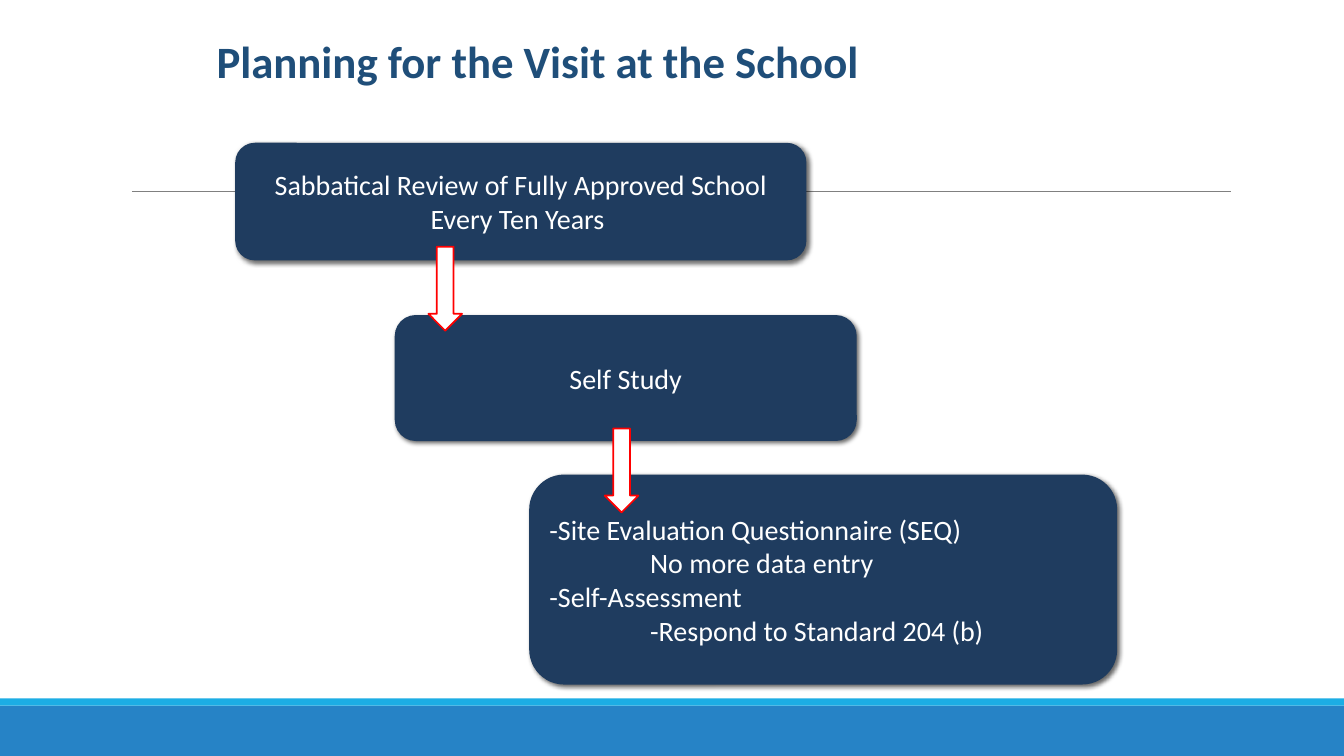
from lxml.etree import SubElement
from pptx import Presentation
from pptx.dml.color import RGBColor
from pptx.enum.shapes import MSO_CONNECTOR, MSO_SHAPE
from pptx.enum.text import MSO_ANCHOR, PP_ALIGN
from pptx.oxml.ns import qn
from pptx.util import Pt

WHITE = RGBColor(0xFF, 0xFF, 0xFF)
NAVY = RGBColor(0x1F, 0x3C, 0x5F)
TITLE = RGBColor(0x1F, 0x4E, 0x79)
BLUE = RGBColor(0x26, 0x83, 0xC6)
CYAN = RGBColor(0x1C, 0xAD, 0xE4)
GRAY = RGBColor(0x80, 0x80, 0x80)
RED = RGBColor(0xFF, 0x00, 0x00)


def write(frame, *lines, size=20, color=WHITE, bold=False,
          align=PP_ALIGN.LEFT, anchor=MSO_ANCHOR.MIDDLE):
    """Fill a frame with (text, indent in points) lines."""
    frame.word_wrap = True
    frame.vertical_anchor = anchor
    for i, (text, indent) in enumerate(lines):
        para = frame.add_paragraph() if i else frame.paragraphs[0]
        para.alignment = align
        if indent:
            para._p.get_or_add_pPr().set("marL", str(Pt(indent)))
        run = para.add_run()
        run.text = text
        font = run.font
        font.name, font.size, font.bold = "Calibri", Pt(size), bold
        font.color.rgb = color


def shade(shape):
    """Add a soft shadow falling to the lower right."""
    effects = shape._element.spPr.find(qn("a:effectLst"))
    outer = SubElement(effects, qn("a:outerShdw"), blurRad=str(Pt(3.5)),
                       dist=str(Pt(2)), dir=str(45 * 60000),
                       algn="tl", rotWithShape="0")
    black = SubElement(outer, qn("a:srgbClr"), val="000000")
    SubElement(black, qn("a:alpha"), val="60000")


class Board:
    def __init__(self, slide, edge=1.25):
        self.shapes = slide.shapes
        self.edge = edge

    def shape(self, kind, x, y, w, h, fill, line=None):
        item = self.shapes.add_shape(kind, Pt(x), Pt(y), Pt(w), Pt(h))
        item.shadow.inherit = False
        item.fill.solid()
        item.fill.fore_color.rgb = fill
        if line is None:
            item.line.fill.background()
        else:
            item.line.color.rgb = line
            item.line.width = Pt(self.edge)
        return item

    def band(self, y, h, fill):
        self.shape(MSO_SHAPE.RECTANGLE, 0, y, 960, h, fill)

    def rule(self, x, y, end):
        line = self.shapes.add_connector(
            MSO_CONNECTOR.STRAIGHT, Pt(x), Pt(y), Pt(end), Pt(y))
        line.line.color.rgb = GRAY
        line.line.width = Pt(0.5)
        SubElement(line._element.spPr, qn("a:effectLst"))

    def title(self, text, x, y, w, h):
        box = self.shapes.add_textbox(Pt(x), Pt(y), Pt(w), Pt(h))
        write(box.text_frame, (text, 0), size=32, color=TITLE, bold=True,
              anchor=MSO_ANCHOR.TOP)

    def step(self, x, y, w, h, *lines, align=PP_ALIGN.CENTER):
        box = self.shape(MSO_SHAPE.ROUNDED_RECTANGLE, x, y, w, h, NAVY)
        shade(box)
        write(box.text_frame, *lines, align=align)

    def arrow(self, x, y):
        self.shape(MSO_SHAPE.DOWN_ARROW, x, y, 24, 60, WHITE, RED)


def main():
    deck = Presentation()
    deck.slide_width, deck.slide_height = Pt(960), Pt(540)
    board = Board(deck.slides.add_slide(deck.slide_layouts[6]))

    board.band(504, 36, BLUE)
    board.band(498.8, 5.2, CYAN)
    board.rule(94.3, 136.8, 879)
    board.title("Planning for the Visit at the School", 147.6, 20.2, 648, 46)

    board.step(168, 102, 408, 84,
               ("Sabbatical Review of Fully Approved School "
                "Every Ten Years ", 0))
    board.step(282, 225, 330, 90, ("Self Study", 0))
    board.step(378, 339, 420, 150,
               ("-Site Evaluation Questionnaire (SEQ)", 0),
               ("No more data entry", 72),
               ("-Self-Assessment", 0),
               ("-Respond to Standard 204 (b)", 72),
               align=PP_ALIGN.LEFT)

    for x, y in ((306, 176.2), (432, 306)):
        board.arrow(x, y)

    deck.save("out.pptx")


if __name__ == "__main__":
    main()
